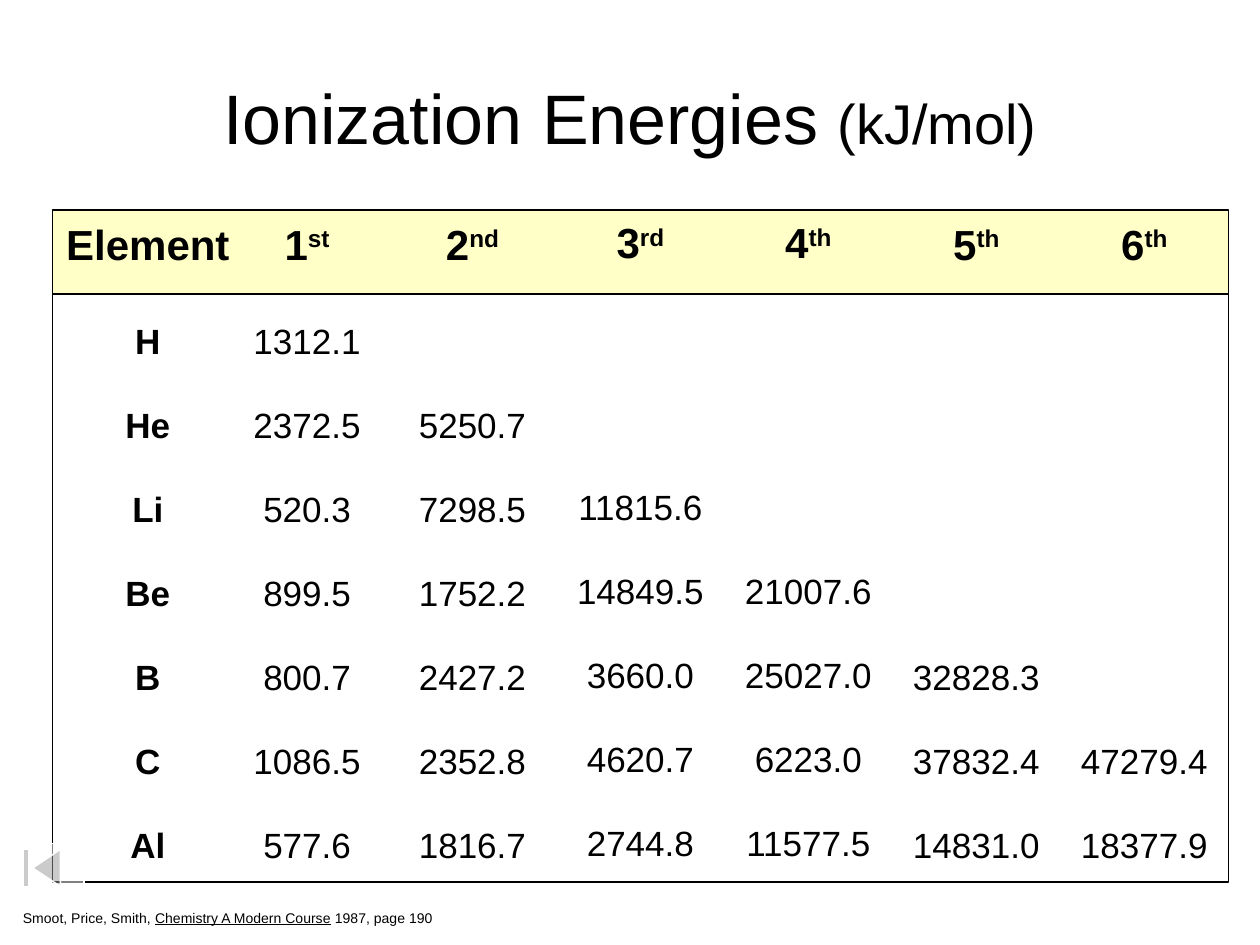
from lxml import etree
from pptx import Presentation
from pptx.dml.color import RGBColor
from pptx.enum.shapes import MSO_SHAPE
from pptx.enum.text import MSO_ANCHOR, PP_ALIGN
from pptx.oxml.ns import qn
from pptx.util import Pt

CENTER = PP_ALIGN.CENTER
MIDDLE = MSO_ANCHOR.MIDDLE
RECTANGLE = MSO_SHAPE.RECTANGLE
BEGINNING_BUTTON = MSO_SHAPE.ACTION_BUTTON_BEGINNING
PLAIN_TABLE_STYLE = "{2D5ABB26-0587-4C30-8999-92F81FD0307C}"

ORDINALS = ["st", "nd", "rd", "th", "th", "th"]
ENERGIES = {
    "H": ["1312.1"],
    "He": ["2372.5", "5250.7"],
    "Li": ["520.3", "7298.5", "11815.6"],
    "Be": ["899.5", "1752.2", "14849.5", "21007.6"],
    "B": ["800.7", "2427.2", "3660.0", "25027.0", "32828.3"],
    "C": ["1086.5", "2352.8", "4620.7", "6223.0", "37832.4", "47279.4"],
    "Al": ["577.6", "1816.7", "2744.8", "11577.5", "14831.0", "18377.9"],
}
COLUMN_WIDTHS = [109, 83, 96, 96, 96, 96, 96]
ROW_HEIGHT = 48
LEFT, TOP, WIDTH = 30, 120, sum(COLUMN_WIDTHS)
RAISED_COLUMNS = (3, 4)


def add_run(para, text, size, bold=False):
    run = para.add_run()
    run.text = text
    run.font.name = "Arial"
    run.font.size = Pt(size)
    run.font.bold = bold
    run.font.color.rgb = RGBColor.from_string("000000")
    return run


def add_outlined_shape(kind, left, top, width, height, line, fill=None, opacity=100):
    shape = slide.shapes.add_shape(kind, Pt(left), Pt(top), Pt(width), Pt(height))
    shape.shadow.inherit = False
    shape.line.color.rgb = RGBColor.from_string(line)
    shape.line.width = Pt(0.75)
    if fill is None:
        shape.fill.background()
    else:
        shape.fill.solid()
        shape.fill.fore_color.rgb = RGBColor.from_string(fill)
        color = shape._element.spPr.find(qn("a:solidFill")).find(qn("a:srgbClr"))
        etree.SubElement(color, qn("a:alpha"), val=str(opacity * 1000))


deck = Presentation()
deck.slide_width, deck.slide_height = Pt(720), Pt(540)
slide = deck.slides.add_slide(deck.slide_layouts[5])

# Title
title = slide.shapes.title
title.left, title.top, title.width, title.height = Pt(36), Pt(21.6), Pt(648), Pt(90)
title.text_frame.vertical_anchor = MIDDLE
para = title.text_frame.paragraphs[0]
para.alignment = CENTER
add_run(para, "Ionization Energies ", 40)
add_run(para, "(kJ/mol)", 32)

# Header band behind the table
add_outlined_shape(RECTANGLE, LEFT, TOP, WIDTH, ROW_HEIGHT, "000000", "FFFF99", 54)

# Energy table
header = ["Element"] + [str(number + 1) for number in range(len(ORDINALS))]
rows = [header] + [[element] + values for element, values in ENERGIES.items()]
table = slide.shapes.add_table(len(rows), len(header), Pt(LEFT), Pt(TOP),
                               Pt(WIDTH), Pt(ROW_HEIGHT * len(rows))).table
table.first_row = table.horz_banding = False
table._tbl.tblPr.find(qn("a:tableStyleId")).text = PLAIN_TABLE_STYLE
for column, width in zip(table.columns, COLUMN_WIDTHS):
    column.width = Pt(width)

for row_index, values in enumerate(rows):
    table.rows[row_index].height = Pt(ROW_HEIGHT)
    is_header = row_index == 0
    for column_index in range(len(header)):
        cell = table.cell(row_index, column_index)
        cell.fill.background()
        cell.vertical_anchor = MIDDLE
        raised = 2 if column_index in RAISED_COLUMNS else 0
        cell.margin_left = Pt(0)
        cell.margin_right = Pt(10 if column_index == 1 else 0)
        cell.margin_top = Pt(0 if is_header else 7 - raised)
        cell.margin_bottom = Pt(7 + raised if is_header else 0)
        if column_index >= len(values):
            continue
        para = cell.text_frame.paragraphs[0]
        para.alignment = CENTER
        add_run(para, values[column_index], 24 if is_header else 20,
                bold=is_header or column_index == 0)
        if is_header and column_index > 0:
            suffix = add_run(para, ORDINALS[column_index - 1], 24, bold=True)
            suffix._r.get_or_add_rPr().set("baseline", "30000")

# Source line
source = slide.shapes.add_textbox(Pt(6), Pt(516), Pt(252), Pt(16.8))
source.text_frame.word_wrap = False
para = source.text_frame.paragraphs[0]
add_run(para, "Smoot, Price, Smith, ", 8)
add_run(para, "Chemistry A Modern Course", 8).font.underline = True
add_run(para, " 1987, page 190", 8)

# Frame around the table body, then the button back to the beginning
add_outlined_shape(RECTANGLE, LEFT, TOP + ROW_HEIGHT, WIDTH,
                   ROW_HEIGHT * len(ENERGIES), "000000")
add_outlined_shape(BEGINNING_BUTTON, 0, 482, 48, 28, "FFFFFF", "FFFFFF", 50)

deck.save("out.pptx")
